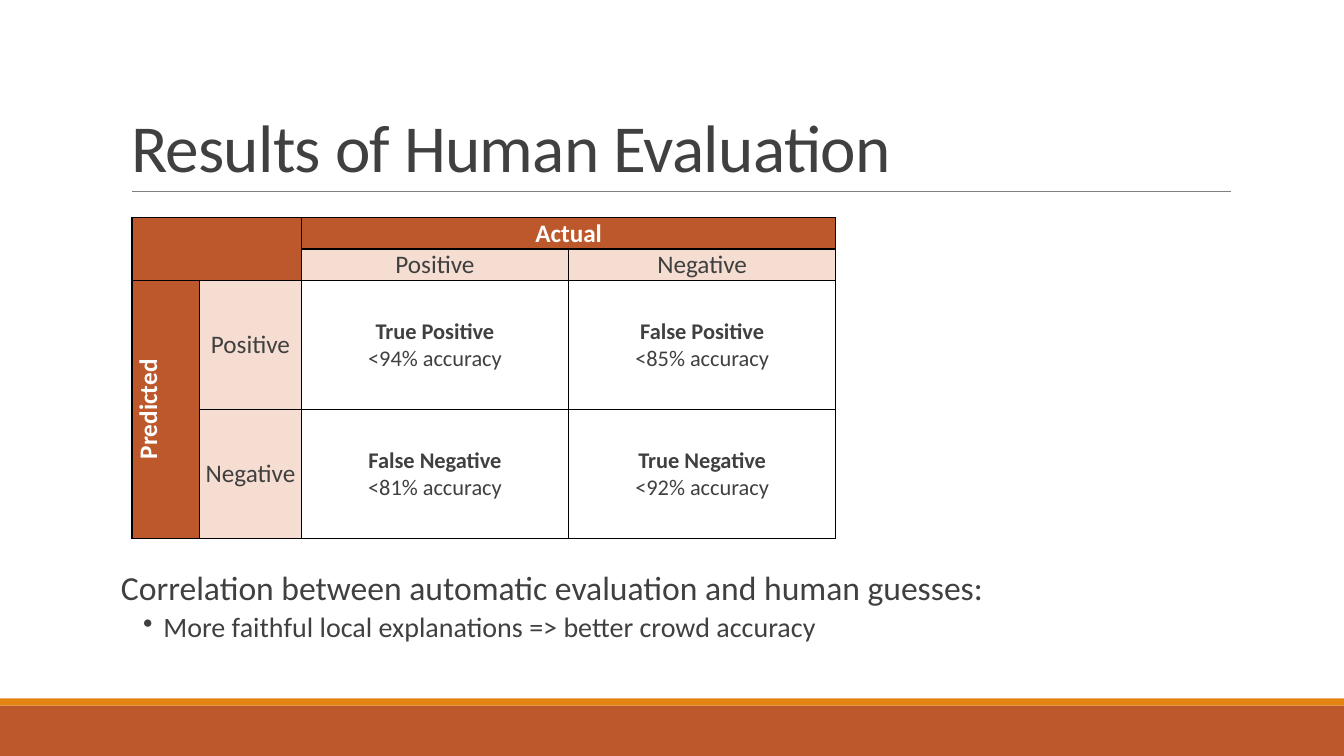
import pptx
import pptx.dml.color
import pptx.enum.shapes
import pptx.enum.text
import pptx.oxml
import pptx.oxml.ns
import pptx.util
from lxml import etree

Inches = pptx.util.Inches
Pt = pptx.util.Pt
ALIGN = pptx.enum.text.PP_ALIGN
ANCHOR = pptx.enum.text.MSO_ANCHOR

FONT = "Calibri"
RUST, ORANGE, PEACH = "BD582C", "E48312", "F5DDD2"
WHITE, BLACK, TEXT, RULE = "FFFFFF", "000000", "404040", "808080"

TITLE = "Results of Human Evaluation"
FINDING = "Correlation between automatic evaluation and human guesses:"
DETAIL = "More faithful local explanations => better crowd accuracy"

# Footer bands: top, height, colour
BANDS = [(7, 0.5, RUST), (6.93, 0.07, ORANGE)]

COLUMN_WIDTHS = [0.67, 1.01, 2.65, 2.65]
ROW_HEIGHTS = [0.29, 0.29, 1.28, 1.28]
MERGES = [((0, 0), (1, 1)), ((0, 2), (0, 3)), ((2, 0), (3, 0))]
HEADINGS = {(0, 2): "Actual", (2, 0): "Predicted"}
CLASSES = {
    (1, 2): "Positive", (1, 3): "Negative",
    (2, 1): "Positive", (3, 1): "Negative",
}
OUTCOMES = {
    (2, 2): ("True Positive", "<94% accuracy"),
    (2, 3): ("False Positive", "<85% accuracy"),
    (3, 2): ("False Negative", "<81% accuracy"),
    (3, 3): ("True Negative", "<92% accuracy"),
}


def color(value):
    return pptx.dml.color.RGBColor.from_string(value)


def add_run(paragraph, text, size, ink=TEXT, bold=False):
    run = paragraph.add_run()
    run.text = text
    run.font.name = FONT
    run.font.size = Pt(size)
    run.font.bold = bold
    run.font.color.rgb = color(ink)
    return run


def add_bands(slide, width):
    for top, height, fill in BANDS:
        band = slide.shapes.add_shape(
            pptx.enum.shapes.MSO_SHAPE.RECTANGLE,
            0, Inches(top), width, Inches(height))
        band.shadow.inherit = False
        band.fill.solid()
        band.fill.fore_color.rgb = color(fill)
        band.line.fill.background()


def add_title_rule(slide):
    rule = slide.shapes.add_connector(
        pptx.enum.shapes.MSO_CONNECTOR.STRAIGHT,
        Inches(1.31), Inches(1.9), Inches(12.21), Inches(1.9))
    rule.line.color.rgb = color(RULE)
    rule.line.width = Pt(0.5)
    etree.SubElement(rule.element.spPr, pptx.oxml.ns.qn("a:effectLst"))


def set_title(slide):
    title = slide.shapes.title
    title.left, title.top = Inches(1.2), Inches(0.31)
    title.width, title.height = Inches(11), Inches(1.59)
    frame = title.text_frame
    frame.auto_size = pptx.enum.text.MSO_AUTO_SIZE.NONE
    frame.vertical_anchor = ANCHOR.BOTTOM
    paragraph = frame.paragraphs[0]
    paragraph.alignment = ALIGN.LEFT
    paragraph.line_spacing = 0.85
    run = add_run(paragraph, TITLE, 48)
    run.font._element.set("spc", "-50")


def add_borders(cell):
    properties = cell._tc.get_or_add_tcPr()
    for side in ("lnL", "lnR", "lnT", "lnB"):
        properties.append(pptx.oxml.parse_xml(
            f'<a:{side} {pptx.oxml.ns.nsdecls("a")} w="{Pt(1)}"><a:solidFill>'
            f'<a:srgbClr val="{BLACK}"/></a:solidFill></a:{side}>'))


def cell_content(position):
    """Return the fill and the lines (text, size, ink, bold) of a cell."""
    if position in OUTCOMES:
        name, accuracy = OUTCOMES[position]
        return WHITE, [(name, 16, TEXT, True), (accuracy, 16, TEXT, False)]
    if position in CLASSES:
        return PEACH, [(CLASSES[position], 18, TEXT, False)]
    if position in HEADINGS:
        return RUST, [(HEADINGS[position], 18, WHITE, True)]
    return RUST, []


def add_confusion_matrix(slide):
    table = slide.shapes.add_table(
        len(ROW_HEIGHTS), len(COLUMN_WIDTHS), Inches(1.31), Inches(2.16),
        Inches(sum(COLUMN_WIDTHS)), Inches(sum(ROW_HEIGHTS))).table
    table.first_row = table.horz_banding = False
    for column, width in zip(table.columns, COLUMN_WIDTHS):
        column.width = Inches(width)
    for row, height in zip(table.rows, ROW_HEIGHTS):
        row.height = Inches(height)
    for start, end in MERGES:
        table.cell(*start).merge(table.cell(*end))

    for row in range(len(ROW_HEIGHTS)):
        for column in range(len(COLUMN_WIDTHS)):
            cell = table.cell(row, column)
            fill, lines = cell_content((row, column))
            cell.margin_left = cell.margin_right = Inches(0.01)
            cell.margin_top, cell.margin_bottom = Inches(0.01), 0
            cell.vertical_anchor = ANCHOR.MIDDLE
            add_borders(cell)
            cell.fill.solid()
            cell.fill.fore_color.rgb = color(fill)
            frame = cell.text_frame
            for index, line in enumerate(lines):
                paragraph = frame.add_paragraph() if index else frame.paragraphs[0]
                paragraph.alignment = ALIGN.CENTER
                add_run(paragraph, *line)
    table.cell(2, 0)._tc.get_or_add_tcPr().set("vert", "vert270")


def add_findings(slide):
    frame = slide.shapes.add_textbox(
        Inches(1.2), Inches(5.62), Inches(11), Inches(1.03)).text_frame
    frame.word_wrap = True
    frame.margin_left = frame.margin_right = 0
    finding, detail = frame.paragraphs[0], frame.add_paragraph()
    for paragraph, text, size, before, after in (
            (finding, FINDING, 24, 12, 2), (detail, DETAIL, 20, 2, 4)):
        paragraph.line_spacing = 0.9
        paragraph.space_before, paragraph.space_after = Pt(before), Pt(after)
        add_run(paragraph, text, size)
    detail.level = 1
    properties = detail._p.get_or_add_pPr()
    properties.set("marL", str(Inches(0.42)))
    properties.set("indent", str(Inches(-0.2)))
    bullet = etree.SubElement(properties, pptx.oxml.ns.qn("a:buChar"))
    bullet.set("char", "•")


def main():
    presentation = pptx.Presentation()
    presentation.slide_width = Inches(13.33)
    presentation.slide_height = Inches(7.5)
    slide = presentation.slides.add_slide(presentation.slide_layouts[5])
    add_bands(slide, presentation.slide_width)
    add_title_rule(slide)
    set_title(slide)
    add_findings(slide)
    add_confusion_matrix(slide)
    presentation.save("out.pptx")


if __name__ == "__main__":
    main()
